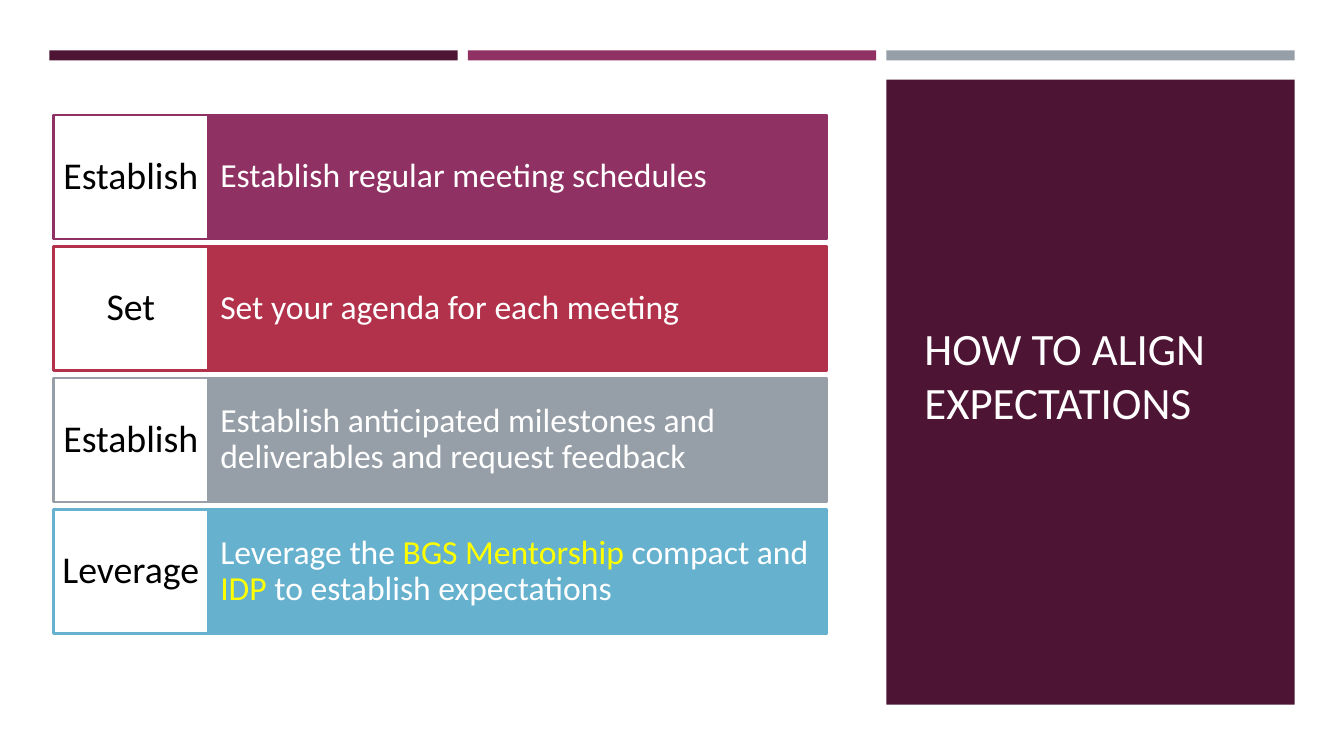
from pptx import Presentation
from pptx.dml.color import RGBColor
from pptx.enum.shapes import MSO_SHAPE
from pptx.enum.text import MSO_ANCHOR, PP_ALIGN
from pptx.util import Inches, Pt

PLUM, MAGENTA, RED, GRAY, BLUE = "4D1434", "903163", "B2324B", "969FA7", "66B1CE"
WHITE, BLACK, YELLOW = "FFFFFF", "000000", "FFFF00"

presentation = Presentation()
presentation.slide_width = Inches(13.33)
presentation.slide_height = Inches(7.5)
slide = presentation.slides.add_slide(presentation.slide_layouts[6])


def add_box(left, top, width, height, fill, line=None):
    shape = slide.shapes.add_shape(
        MSO_SHAPE.RECTANGLE, Inches(left), Inches(top), Inches(width), Inches(height))
    shape.shadow.inherit = False
    shape.fill.solid()
    shape.fill.fore_color.rgb = RGBColor.from_string(fill)
    if line:
        shape.line.color.rgb = RGBColor.from_string(line)
        shape.line.width = Pt(1.75)
    else:
        shape.line.fill.background()
    return shape


def write_text(shape, runs, size, align=PP_ALIGN.LEFT, spacing=1.0,
               margins=(0.1, 0.05), wrap=True):
    frame = shape.text_frame
    frame.word_wrap = wrap
    frame.vertical_anchor = MSO_ANCHOR.MIDDLE
    frame.margin_left = frame.margin_right = Inches(margins[0])
    frame.margin_top = frame.margin_bottom = Inches(margins[1])
    paragraph = frame.paragraphs[0]
    paragraph.alignment = align
    paragraph.line_spacing = spacing
    for text, color in runs:
        run = paragraph.add_run()
        run.text = text
        run.font.name = "Calibri"
        run.font.size = Pt(size)
        run.font.color.rgb = RGBColor.from_string(color)


column_left, column_width, column_pitch = 0.49, 4.05, 4.15
for column, color in enumerate((PLUM, MAGENTA, GRAY)):
    add_box(column_left + column * column_pitch, 0.5, column_width, 0.1, color)

panel_left = column_left + 2 * column_pitch
add_box(panel_left, 0.79, column_width, 6.2, PLUM)
title = slide.shapes.add_textbox(Inches(9.07), Inches(1.14), Inches(3.63), Inches(5.15))
write_text(title, [("HOW TO ALIGN EXPECTATIONS", "FFFEFF")], size=32)

steps = [
    ("Establish", MAGENTA, [("Establish regular meeting schedules", WHITE)]),
    ("Set", RED, [("Set your agenda for each meeting", WHITE)]),
    ("Establish", GRAY, [
        ("Establish anticipated milestones and deliverables and request feedback", WHITE)]),
    ("Leverage", BLUE, [
        ("Leverage the ", WHITE), ("BGS Mentorship ", YELLOW), ("compact and ", WHITE),
        ("IDP", YELLOW), (" to establish expectations", WHITE)]),
]
label_left, label_width, detail_width = 0.53, 1.535, 6.14
first_top, row_height, row_pitch = 1.14, 1.23, 1.305
for row, (label, color, details) in enumerate(steps):
    top = first_top + row * row_pitch
    detail_box = add_box(label_left + label_width, top, detail_width, row_height, color, color)
    write_text(detail_box, details, size=24, spacing=0.9, margins=(0.12, 0.31))
    label_box = add_box(label_left, top, label_width, row_height, WHITE, color)
    write_text(label_box, [(label, BLACK)], size=27, align=PP_ALIGN.CENTER,
               spacing=0.9, margins=(0.08, 0.12), wrap=False)

presentation.save("out.pptx")
